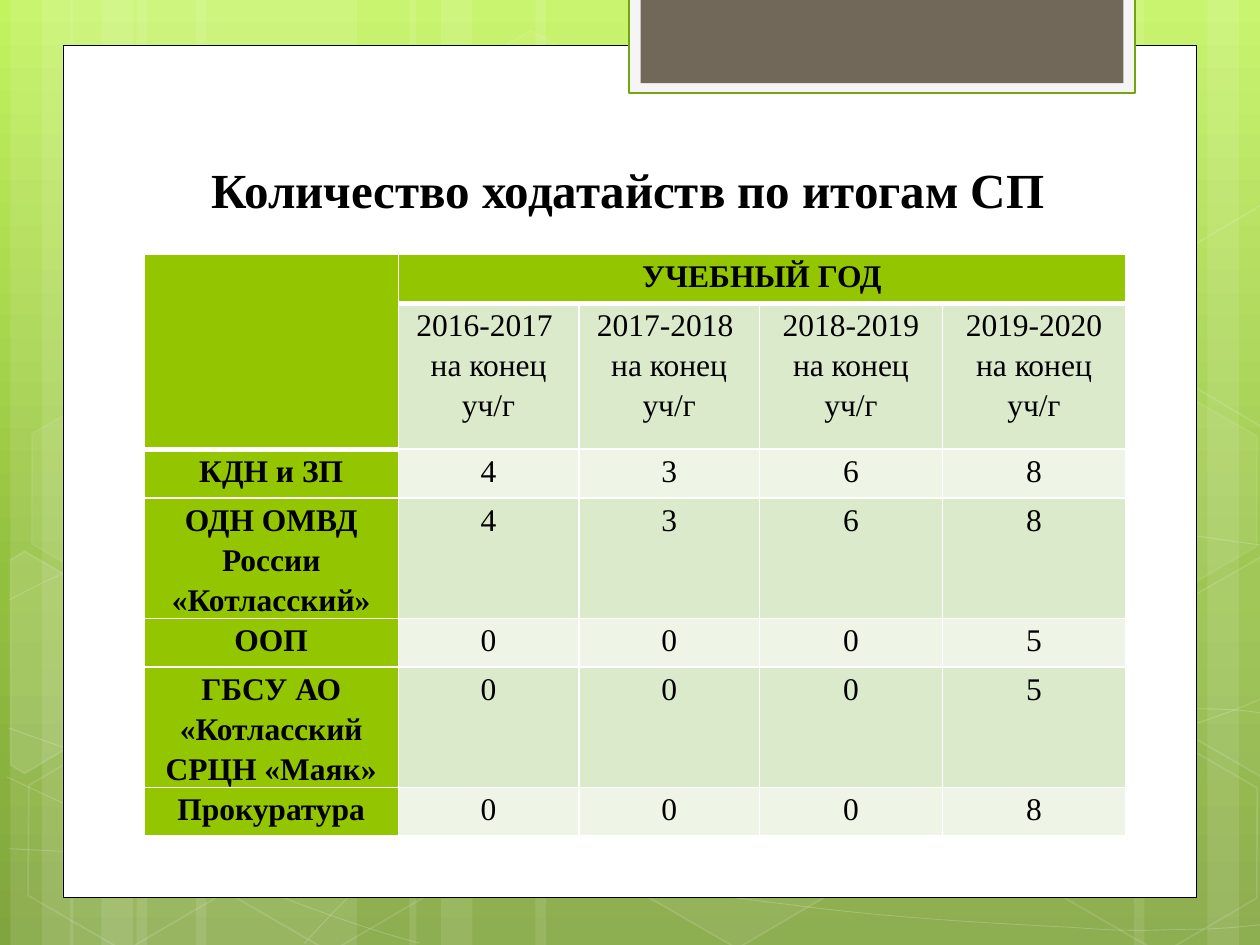
import copy

import pptx
import pptx.dml.color
import pptx.enum.shapes
import pptx.enum.text
import pptx.oxml
import pptx.oxml.ns
import pptx.util

Pt = pptx.util.Pt
SHAPE = pptx.enum.shapes.MSO_SHAPE
qn = pptx.oxml.ns.qn
NS = pptx.oxml.ns.nsdecls("a")
FONT = "Times New Roman"
COLORS = {
    "white": "FFFFFF", "black": "000000", "header": "94C600",
    "band_dark": "DCEACC", "band_light": "EEF5E7",
    "tab": "F5F5F5", "tab_line": "74A510", "tab_inner": "71685A",
    "bg_top": "C3F35F", "bg_middle": "93BF3F", "bg_bottom": "81A53E",
}

# Left and width of the full-height light stripes
STRIPES = [(78, 126), (6, 36), (24, 60), (112, 126), (40, 36), (58, 60),
           (528, 126), (690, 36), (648, 60), (306, 222), (234, 36), (252, 60)]
# Bezier chains: start, then two control points and an end per segment
CURVES = [
    [(5, 485), (44, 487), (83, 489), (137, 488), (191, 487), (258, 486), (330, 479),
     (402, 472), (504, 458), (570, 444), (636, 430), (703, 409), (725, 397)],
    [(5, 343), (26, 332), (47, 321), (87, 310), (128, 300), (186, 284), (250, 279),
     (314, 274), (392, 273), (471, 279), (550, 284), (682, 307), (725, 312)],
    [(4, 444), (89, 484), (178, 523), (240, 539)],
    [(5, 416), (27, 424), (50, 432), (92, 444), (134, 454), (197, 472), (257, 485),
     (317, 497), (392, 510), (452, 517), (512, 525), (576, 528), (614, 530),
     (652, 533), (662, 531), (680, 531), (699, 531), (713, 529), (725, 528)],
    [(174, 539), (187, 525), (200, 510), (217, 498), (235, 485), (259, 470), (279, 460),
     (300, 450), (312, 446), (338, 438), (364, 431), (413, 421), (438, 416),
     (464, 411), (467, 411), (490, 410), (512, 408), (547, 405), (572, 405),
     (597, 404), (638, 405), (638, 405), (654, 405), (670, 405), (686, 405),
     (699, 405), (711, 406), (718, 407), (724, 408), (722, 407), (724, 408)],
]
# Left, top, fill opacity and line opacity in percent
HEXAGONS = [(240.5, 26, 4, 8), (358, 424, 6, 12), (8, 425.5, 0, 12),
            (10, 224.5, 7, 8), (125.5, 426, 0, 12), (542, 326, 10, 12),
            (600.5, 427, 0, 12), (600.5, 226, 7, 8)]
# Hexagons cut by the slide edge: outline, fill opacity
CUT_HEXAGONS = [
    ([(6, 320), (14, 315), (69, 347), (68, 410), (14, 442), (6, 437)], 10),
    ([(667, 349), (721, 318), (726, 321), (726, 441), (721, 444), (667, 413)], 4),
    ([(667, 149), (721, 117), (727, 121), (726, 241), (721, 244), (667, 212)], 0),
]

YEARS = ["2016-2017 ", "2017-2018 ", "2018-2019", "2019-2020"]
ROWS = [("КДН и ЗП", 4, 3, 6, 8),
        ("ОДН ОМВД России «Котласский»", 4, 3, 6, 8),
        ("ООП", 0, 0, 0, 5),
        ("ГБСУ АО «Котласский СРЦН «Маяк»", 0, 0, 0, 5),
        ("Прокуратура", 0, 0, 0, 8)]
COL_WIDTHS = [145.2, 103.2, 103.2, 104.6, 104.6]
ROW_HEIGHTS = [27.9, 83.4, 27.9, 68.4, 27.9, 68.4, 27.9]


def rgb(name):
    return pptx.dml.color.RGBColor.from_string(COLORS[name])


def set_alpha(fill, percent):
    clr = fill._xPr.find(".//" + qn("a:srgbClr"))
    if percent < 100:
        clr.append(pptx.oxml.parse_xml(f'<a:alpha {NS} val="{percent * 1000}"/>'))


def style(sp, fill=None, opacity=100, line=None, width=1, line_opacity=100):
    sp.shadow.inherit = False
    if fill and opacity:
        sp.fill.solid()
        sp.fill.fore_color.rgb = rgb(fill)
        set_alpha(sp.fill, opacity)
    else:
        sp.fill.background()
    if line:
        sp.line.color.rgb = rgb(line)
        sp.line.width = Pt(width)
        set_alpha(sp.line.fill, line_opacity)
    else:
        sp.line.fill.background()


def add_shape(s, kind, box, **look):
    sp = s.shapes.add_shape(kind, *[Pt(v) for v in box])
    style(sp, **look)
    return sp


def add_outline(s, points, close, **look):
    builder = s.shapes.build_freeform(*points[0], scale=Pt(1))
    builder.add_line_segments(points[1:], close=close)
    sp = builder.convert_to_shape()
    style(sp, **look)
    return sp


def add_curve(s, chain, **look):
    """Draw straight pieces between the anchors, then bend each into a cubic."""
    anchors = chain[::3]
    sp = add_outline(s, anchors, False, **look)
    x0, y0 = (min(p[axis] for p in anchors) for axis in (0, 1))
    for i, piece in enumerate(sp.element.findall(".//" + qn("a:lnTo"))):
        piece.tag = qn("a:cubicBezTo")
        for k, (x, y) in enumerate(chain[3 * i + 1:3 * i + 3]):
            piece.insert(k, pptx.oxml.parse_xml(f'<a:pt {NS} x="{x - x0}" y="{y - y0}"/>'))


def format_text(tf, size, bold):
    for p in tf.paragraphs:
        p.alignment = pptx.enum.text.PP_ALIGN.CENTER
        p.font.size = Pt(size)
        for r in p.runs:
            r.font.name, r.font.size, r.font.bold = FONT, Pt(size), bold
            r.font.color.rgb = rgb("black")


def add_backdrop(s, height):
    # Three-stop vertical gradient
    fill = s.background.fill
    fill.gradient()
    fill.gradient_angle = 270
    first = fill.gradient_stops[0]._gs
    first.addnext(copy.deepcopy(first))
    for stop, (pos, name) in zip(fill.gradient_stops,
                                 [(0, "bg_top"), (0.62, "bg_middle"), (1, "bg_bottom")]):
        stop.position = pos
        stop.color.rgb = rgb(name)
    # Stripes, curves and hexagons
    for left, width in STRIPES:
        add_shape(s, SHAPE.RECTANGLE, (left, 0, width, height), fill="white", opacity=10)
    for chain in CURVES:
        add_curve(s, chain, line="white", width=0.5, line_opacity=20)
    for left, top, opacity, line_opacity in HEXAGONS:
        sp = add_shape(s, SHAPE.HEXAGON, (left, top, 126, 109.5), fill="white",
                       opacity=opacity, line="white", line_opacity=line_opacity)
        sp.adjustments[0], sp.adjustments[1] = 0.285, 1.155
        sp.rotation = 30
    for points, opacity in CUT_HEXAGONS:
        add_outline(s, points, True, fill="white", opacity=opacity, line="white", line_opacity=12)


def add_panel(s, x, y, w, h):
    add_shape(s, SHAPE.RECTANGLE, (x, y, w, h), fill="white", line="black", width=0.5)
    # Tab hanging from the top edge
    tab = x + 323.2
    add_shape(s, SHAPE.RECTANGLE, (tab, -1.5, 289.4, 54.7), fill="tab", line="tab_line", width=1.25)
    add_shape(s, SHAPE.RECTANGLE, (tab + 6.8, -1.5, 276, 49), fill="tab_inner")


def add_title(s, x, y, w, h):
    sp = s.shapes.title
    sp.element.getparent().append(sp.element)  # in front of the panel
    sp.left, sp.top, sp.width, sp.height = Pt(x), Pt(y), Pt(w), Pt(h)
    tf = sp.text_frame
    tf.text = "Количество ходатайств по итогам СП"
    tf.vertical_anchor = pptx.enum.text.MSO_ANCHOR.BOTTOM
    tf.auto_size = pptx.enum.text.MSO_AUTO_SIZE.NONE
    format_text(tf, 28, True)


def set_borders(cell, top, bottom):
    for i, (side, width) in enumerate([("L", 1), ("R", 1), ("T", top), ("B", bottom)]):
        cell._tc.get_or_add_tcPr().insert(i, pptx.oxml.parse_xml(
            f'<a:ln{side} {NS} w="{Pt(width)}"><a:solidFill>'
            f'<a:srgbClr val="{COLORS["white"]}"/></a:solidFill></a:ln{side}>'))


def add_requests_table(s, x, y):
    grid = [["", "УЧЕБНЫЙ ГОД", "", "", ""],
            [""] + [f"{year}\nна конец уч/г" for year in YEARS], *ROWS]
    table = s.shapes.add_table(len(grid), len(COL_WIDTHS), Pt(x), Pt(y),
                               Pt(sum(COL_WIDTHS)), Pt(sum(ROW_HEIGHTS))).table
    table.first_row = table.horz_banding = False
    for col, width in zip(table.columns, COL_WIDTHS):
        col.width = Pt(width)
    for row, height in zip(table.rows, ROW_HEIGHTS):
        row.height = Pt(height)
    for i, values in enumerate(grid):
        for j, value in enumerate(values):
            cell = table.cell(i, j)
            header = i == 0 or j == 0
            cell.margin_left = cell.margin_right = Pt(4.5)
            cell.margin_top = cell.margin_bottom = 0
            cell.text_frame.text = str(value)
            format_text(cell.text_frame, 18, header)
            for p in cell.text_frame.paragraphs:
                p.line_spacing = 1.15
            thick_top = (i == 1 and j > 0) or (i == 2 and j == 0)
            thick_bottom = i == 0 or (i == 1 and j == 0)
            set_borders(cell, 3 if thick_top else 1, 3 if thick_bottom else 1)
            cell.fill.solid()
            cell.fill.fore_color.rgb = rgb(
                "header" if header else "band_dark" if i % 2 else "band_light")
    table.cell(0, 0).merge(table.cell(1, 0))
    table.cell(0, 1).merge(table.cell(0, 4))


prs = pptx.Presentation()
prs.slide_width, prs.slide_height = Pt(720), Pt(540)
s = prs.slides.add_slide(prs.slide_layouts[5])
add_backdrop(s, 540)
add_panel(s, 36, 26, 648, 487)
add_title(s, 82.3, 80.8, 553, 47.5)
add_requests_table(s, 82.4, 145.4)
prs.save("out.pptx")
